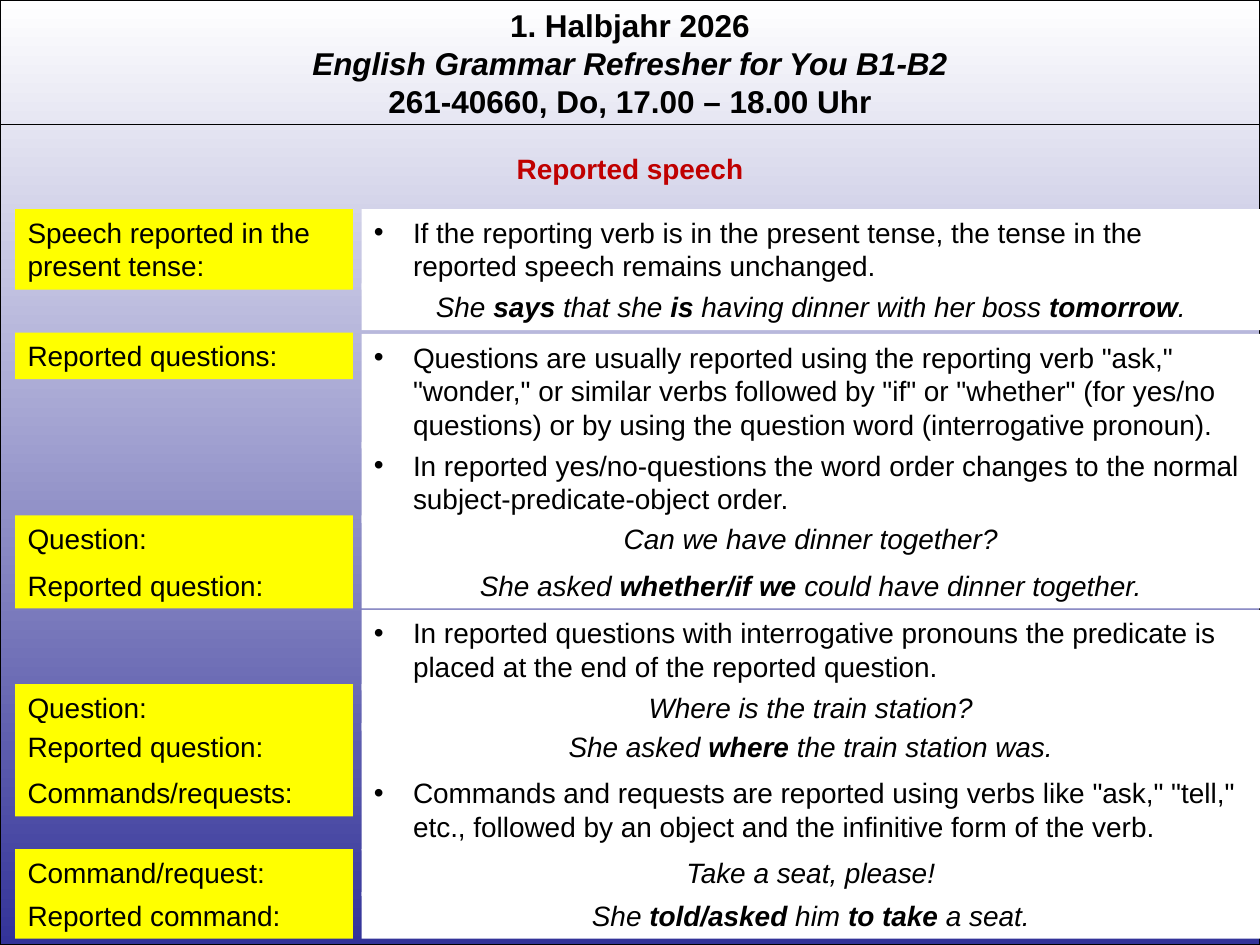
from lxml import etree
from pptx import Presentation
from pptx.dml.color import RGBColor
from pptx.enum import shapes, text
from pptx.oxml.ns import qn
from pptx.util import Inches, Pt

BLACK = RGBColor(0, 0, 0)
WHITE = RGBColor(255, 255, 255)
YELLOW = RGBColor(255, 255, 0)
RED = RGBColor(0xC0, 0, 0)
NAVY = RGBColor(0x33, 0x33, 0x99)

prs = Presentation()
prs.slide_width, prs.slide_height = Inches(10), Inches(7.5)
slide = prs.slides.add_slide(prs.slide_layouts[6])


def put(lines, left, top, width, height, fill=None, size=16, color=BLACK,
        bold=False, italic=(), center=False, bullet=False):
    """Add a text box; *stars* enclose bold words, italic lists line numbers."""
    box = slide.shapes.add_textbox(
        Inches(left), Inches(top), Inches(width), Inches(height))
    if fill is not None:
        box.fill.solid()
        box.fill.fore_color.rgb = fill
    frame = box.text_frame
    frame.word_wrap = True
    frame.auto_size = text.MSO_AUTO_SIZE.SHAPE_TO_FIT_TEXT
    for row, line in enumerate(lines):
        para = frame.paragraphs[0] if row == 0 else frame.add_paragraph()
        para.alignment = text.PP_ALIGN.CENTER if center else text.PP_ALIGN.LEFT
        if bullet:
            props = para._p.get_or_add_pPr()
            props.set("marL", str(Inches(0.31)))
            props.set("indent", str(-Inches(0.31)))
            etree.SubElement(props, qn("a:buFont"), typeface="Arial")
            etree.SubElement(props, qn("a:buChar"), char="•")
        for part, words in enumerate(line.split("*")):
            run = para.add_run()
            run.text = words
            font = run.font
            font.name, font.size = "Arial", Pt(size)
            font.bold = bold or part % 2 == 1
            font.italic = row in italic
            font.color.rgb = color


# Background and header
back = slide.shapes.add_shape(
    shapes.MSO_SHAPE.RECTANGLE, 0, 0, prs.slide_width, prs.slide_height)
back.shadow.inherit = False
back.fill.gradient()
back.fill.gradient_angle = 270
for stop, tone in zip(back.fill.gradient_stops, (WHITE, NAVY)):
    stop.color.rgb = tone
    stop.position = 0 if tone == WHITE else 1
back.line.color.rgb = BLACK
back.line.width = Pt(0.75)

put(["1. Halbjahr 2026", "English Grammar Refresher for You B1-B2",
     "261-40660, Do, 17.00 – 18.00 Uhr"],
    0, 0, 10, 1.01, size=18, bold=True, italic=(1,), center=True)

rule = slide.shapes.add_connector(
    shapes.MSO_CONNECTOR.STRAIGHT, 0, Inches(0.99), Inches(10), Inches(0.99))
rule.line.color.rgb = BLACK
rule.line.width = Pt(0.75)
etree.SubElement(rule._element.spPr, qn("a:effectLst"))

put(["Reported speech"], 0, 1.15, 10, 0.37, color=RED, bold=True, center=True)

# Box height by number of text lines
HEIGHT = {1: 0.37, 2: 0.64, 3: 0.91}

labels = [
    (1.66, 2, "Speech reported in the present tense:"),
    (2.64, 1, "Reported questions:"),
    (4.09, 1, "Question:"),
    (4.46, 1, "Reported question:"),
    (5.43, 1, "Question:"),
    (5.74, 1, "Reported question:"),
    (6.11, 1, "Commands/requests:"),
    (6.74, 1, "Command/request:"),
    (7.08, 1, "Reported command:"),
]
for top, count, words in labels:
    put([words], 0.12, top, 2.68, HEIGHT[count], fill=YELLOW)

# Rules take several lines and a bullet, examples one centred italic line
notes = [
    (1.66, 2, "If the reporting verb is in the present tense, the tense in the "
              "reported speech remains unchanged."),
    (2.25, 1, "She *says* that she* is* having dinner with her boss* tomorrow*."),
    (2.65, 3, 'Questions are usually reported using the reporting verb "ask," '
              '"wonder," or similar verbs followed by "if" or "whether" (for '
              'yes/no questions) or by using the question word (interrogative '
              'pronoun).'),
    (3.51, 2, "In reported yes/no-questions the word order changes to the "
              "normal subject-predicate-object order."),
    (4.09, 1, "Can we have dinner together?"),
    (4.46, 1, "She asked *whether/if we *could have dinner together."),
    (4.84, 2, "In reported questions with interrogative pronouns the predicate "
              "is placed at the end of the reported question."),
    (5.43, 1, "Where is the train station?"),
    (5.74, 1, "She asked *where *the train station was."),
    (6.11, 2, 'Commands and requests are reported using verbs like "ask," '
              '"tell," etc., followed by an object and the infinitive form of '
              'the verb.'),
    (6.74, 1, "Take a seat, please!"),
    (7.08, 1, "She *told/asked *him *to take *a seat."),
]
for top, count, words in notes:
    single = count == 1
    put([words], 2.87, top, 7.13, HEIGHT[count], fill=WHITE,
        italic=(0,) if single else (), center=single, bullet=not single)

prs.save("out.pptx")
